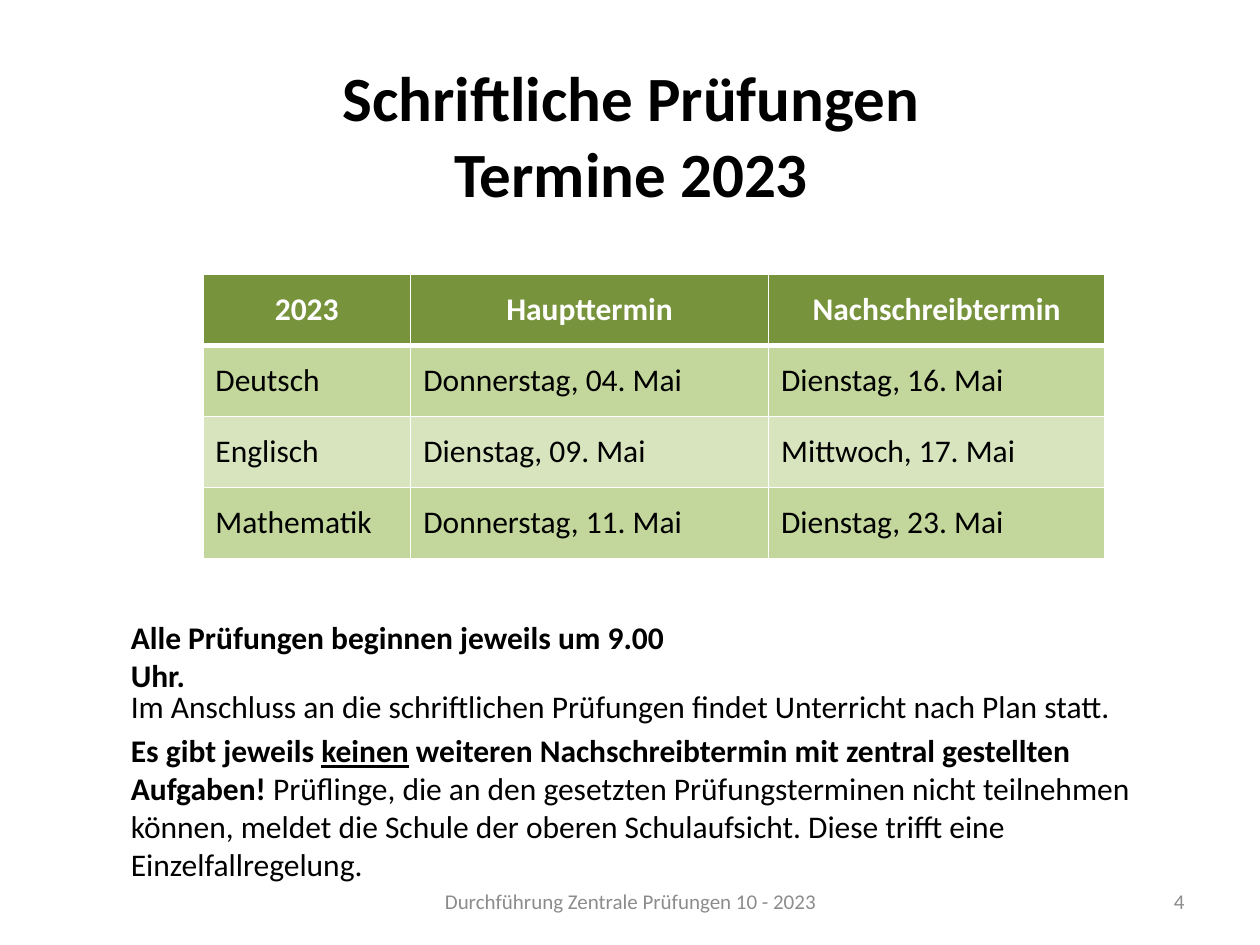
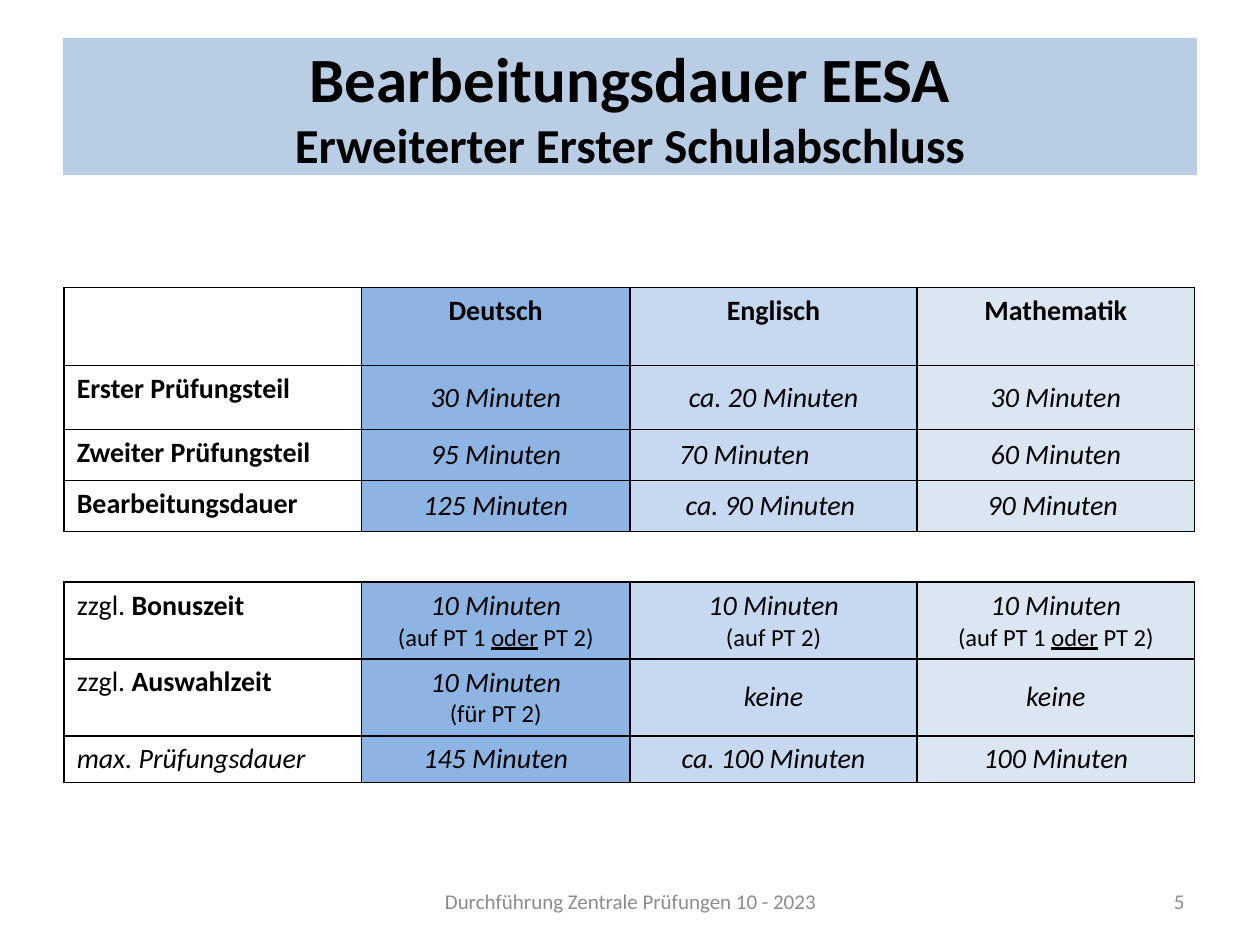
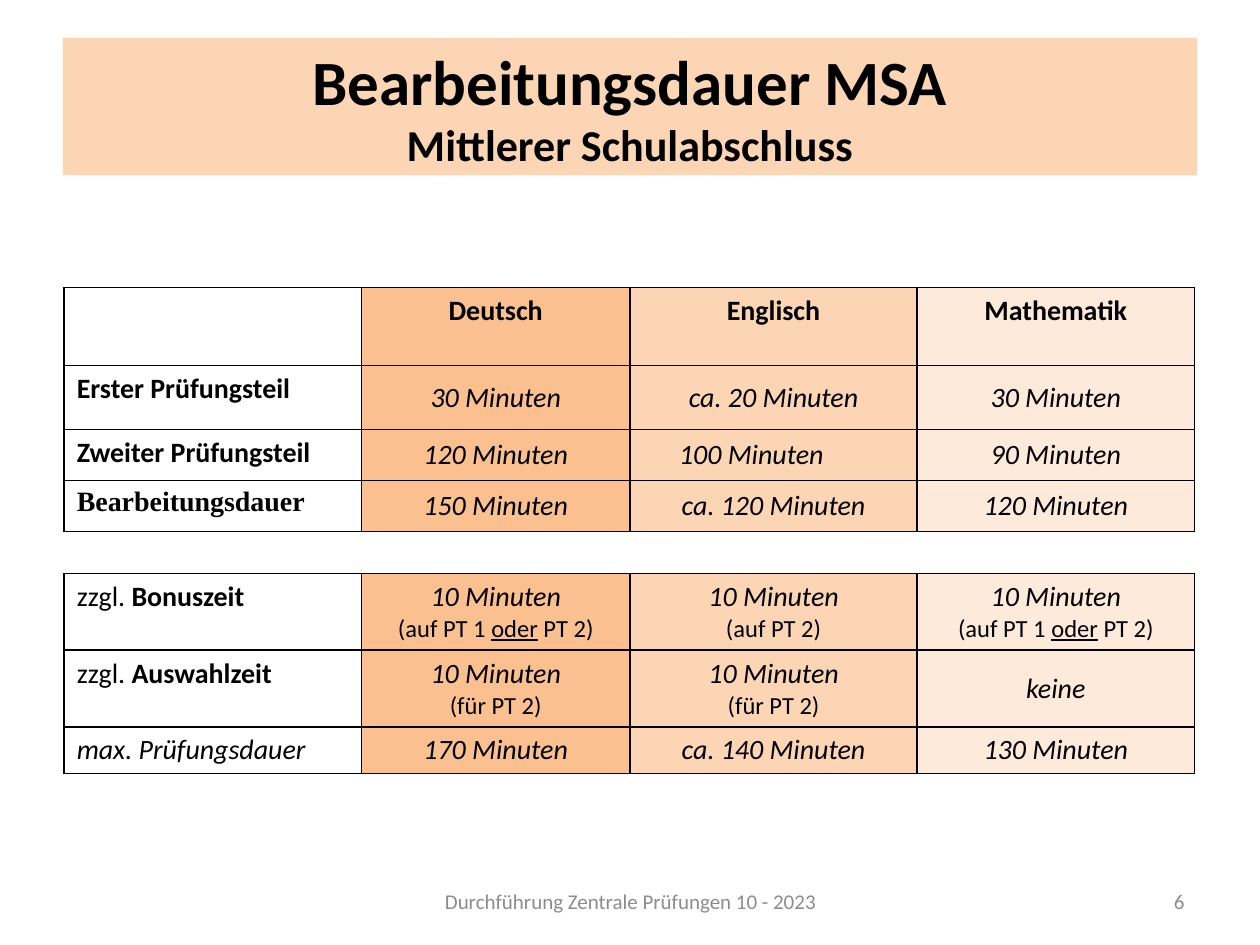
from lxml.etree import SubElement
from pptx import Presentation
from pptx.dml.color import RGBColor
from pptx.enum.shapes import MSO_SHAPE
from pptx.enum.text import MSO_ANCHOR, PP_ALIGN
from pptx.oxml.ns import qn
from pptx.util import Inches, Pt

COLS, ROWS = 100, 75
FONT, BLACK, WHITE, GRAY = "Calibri", "000000", "FFFFFF", "8C8C8C"
LEFT, CENTER, RIGHT = PP_ALIGN.LEFT, PP_ALIGN.CENTER, PP_ALIGN.RIGHT
TOP, MIDDLE = MSO_ANCHOR.TOP, MSO_ANCHOR.MIDDLE
FOOTER = "Durchführung Zentrale Prüfungen 10 - 2023"
TITLE_BAND = (5, 3, 90, 10.9)
SUBJECTS = ["Deutsch", "Englisch", "Mathematik"]
DURATION_COLS = [23.6, 21.3, 22.8, 22]
PART_ROWS, EXTRA_ROWS = [6.2, 5.1, 4.05, 4.05], [6.1, 6.1, 3.7]
EITHER_PART = "10 Minuten\n(auf PT 1 _oder_ PT 2)"
CHOICE_TIME = "10 Minuten\n(für PT 2)"
BONUS_TIMES = [EITHER_PART, "10 Minuten\n(auf PT 2)", EITHER_PART]


def color(value):
    """Turn a hex string into a colour."""
    return RGBColor.from_string(value)


def grid(*units):
    """Turn grid units into lengths."""
    return [Inches(10 / COLS * unit) for unit in units]


def add_runs(p, text, hue=BLACK, **fmt):
    """Add runs to a paragraph; *bold* and _underlined_ parts are marked."""
    for i, part in enumerate(text.split("*")):
        for j, piece in enumerate(part.split("_")):
            if not piece:
                continue
            r = p.add_run()
            r.text = piece
            values = {"name": FONT, "size": Pt(18), **fmt}
            if i % 2:
                values["bold"] = True
            if j % 2:
                values["underline"] = True
            for key, value in values.items():
                setattr(r.font, key, value)
            r.font.color.rgb = color(hue)


def add_text(slide, box, text, align=LEFT, anchor=TOP, gap=0, **fmt):
    """Add a wrapping text box with one paragraph per line."""
    tf = slide.shapes.add_textbox(*grid(*box)).text_frame
    tf.word_wrap, tf.vertical_anchor = True, anchor
    for i, line in enumerate(text.split("\n")):
        p = tf.add_paragraph() if i else tf.paragraphs[0]
        p.alignment, p.space_after = align, Pt(gap)
        add_runs(p, line, **fmt)


def add_title(slide, box, lines, sizes, fill=None):
    """Add a two-line bold title, on a colour band if a fill is given."""
    sp = slide.shapes.add_shape(MSO_SHAPE.RECTANGLE, *grid(*box))
    sp.shadow.inherit = False
    sp.line.fill.background()
    if fill:
        sp.fill.solid()
        sp.fill.fore_color.rgb = color(fill)
    else:
        sp.fill.background()
    tf = sp.text_frame
    tf.word_wrap, tf.vertical_anchor = True, MIDDLE
    p = tf.paragraphs[0]
    p.alignment = CENTER
    for i, (line, size) in enumerate(zip(lines, sizes)):
        if i:
            p.add_line_break()
        add_runs(p, line, size=Pt(size), bold=True)


def add_footer(slide, number):
    """Add the footer line and the page number."""
    style = {"anchor": MIDDLE, "size": Pt(12), "hue": GRAY}
    add_text(slide, (34.2, 69.5, 31.7, 4), FOOTER, CENTER, **style)
    add_text(slide, (71.7, 69.5, 23.3, 4), str(number), RIGHT, **style)


def style_cell(cell, fill, line, widths):
    """Set the borders (left, right, top, bottom) and fill of a cell."""
    tc_pr = cell._tc.get_or_add_tcPr()
    for side, width in zip("LRTB", widths):
        ln = SubElement(tc_pr, qn(f"a:ln{side}"), w=str(Pt(width)))
        SubElement(SubElement(ln, qn("a:solidFill")), qn("a:srgbClr"), val=line)
    if fill:
        cell.fill.solid()
        cell.fill.fore_color.rgb = color(fill)
    else:
        cell.fill.background()


def add_grid_table(slide, left, top, widths, heights):
    """Add an unbanded table with the given column widths and row heights."""
    box = grid(left, top, sum(widths), sum(heights))
    table = slide.shapes.add_table(len(heights), len(widths), *box).table
    table.first_row = table.horz_banding = False
    for column, width in zip(table.columns, grid(*widths)):
        column.width = width
    for row, height in zip(table.rows, grid(*heights)):
        row.height = height
    return table


def fill_cell(cell, text, align, anchor, **fmt):
    """Write a cell; its second line is small and upright."""
    cell.vertical_anchor = anchor
    for i, line in enumerate(text.split("\n")):
        p = cell.text_frame.add_paragraph() if i else cell.text_frame.paragraphs[0]
        p.alignment = align
        add_runs(p, line, **({"size": Pt(14)} if i else fmt))


def add_dates_table(slide, left, top):
    """Add the green table of exam dates."""
    rows = [
        ["2023", "Haupttermin", "Nachschreibtermin"],
        ["Deutsch", "Donnerstag, 04. Mai", "Dienstag, 16. Mai"],
        ["Englisch", "Dienstag, 09. Mai", "Mittwoch, 17. Mai"],
        ["Mathematik", "Donnerstag, 11. Mai", "Dienstag, 23. Mai"],
    ]
    fills = ["77933C", "C3D69B", "D7E4BD", "C3D69B"]
    edges = [1, 3, 1, 1, 1]
    table = add_grid_table(slide, left, top, [16.5, 28.4, 26.7], [5.63] * len(rows))
    for y, row in enumerate(rows):
        head = y == 0
        for x, text in enumerate(row):
            cell = table.cell(y, x)
            style_cell(cell, fills[y], WHITE, (1, 1, edges[y], edges[y + 1]))
            fill_cell(cell, text, CENTER if head else LEFT, MIDDLE,
                      hue=WHITE if head else BLACK, bold=head)


def add_duration_table(slide, left, top, heights, rows, tints, fonts=None):
    """Add a table with a label column and one tinted column per subject."""
    table = add_grid_table(slide, left, top, DURATION_COLS, heights)
    for y, row in enumerate(rows):
        for x, text in enumerate(row):
            cell = table.cell(y, x)
            style_cell(cell, tints[x - 1] if x else None, BLACK, [1] * 4)
            head = text in SUBJECTS
            italic = text.startswith("max.") or x > 0 and not head
            name = (fonts or {}).get(text, FONT)
            fill_cell(cell, text, CENTER if x else LEFT,
                      MIDDLE if x and not head else TOP,
                      size=Pt(16), name=name, bold=head, italic=italic)
    return table


def dates_slide(slide):
    """Build the slide with the exam dates."""
    add_title(slide, (5.1, 4.4, 90, 12.5),
              ["Schriftliche Prüfungen", "Termine 2023"], [36, 36])
    add_dates_table(slide, 16.1, 21.8)
    add_text(slide, (9.4, 48.6, 49, 4),
             "Alle Prüfungen beginnen jeweils um 9.00 Uhr.", bold=True)
    add_text(slide, (9.4, 54, 83.1, 16.7),
             "Im Anschluss an die schriftlichen Prüfungen findet Unterricht nach "
             "Plan statt.\n*Es gibt jeweils _keinen_ weiteren Nachschreibtermin mit "
             "zentral gestellten Aufgaben! *Prüflinge, die an den gesetzten "
             "Prüfungsterminen nicht teilnehmen können, meldet die Schule der "
             "oberen Schulaufsicht. Diese trifft eine Einzelfallregelung.", gap=4)


def duration_slide(slide, title, subtitle, size, band, tints, second, total,
                   choice, maximum, extra_top, fonts=None):
    """Build a slide with the exam durations for one school certificate."""
    add_title(slide, TITLE_BAND, [title, subtitle], [36, size], band)
    parts = [
        ["", *SUBJECTS],
        ["*Erster Prüfungsteil*", "30 Minuten", "ca. 20 Minuten", "30 Minuten"],
        ["*Zweiter Prüfungsteil*", *second],
        ["*Bearbeitungsdauer*", *total],
    ]
    extras = [
        ["zzgl. *Bonuszeit*", *BONUS_TIMES],
        ["zzgl.* Auswahlzeit*", *choice],
        ["max. Prüfungsdauer", *maximum],
    ]
    table = add_duration_table(slide, 5.1, 22.8, PART_ROWS, parts, tints, fonts)
    p = table.cell(2, 2).text_frame.paragraphs[0]
    p.alignment = LEFT
    p._p.get_or_add_pPr().set("marL", str(Inches(0.29)))
    add_duration_table(slide, 5.1, extra_top, EXTRA_ROWS, extras, tints)


def eesa_slide(slide):
    """Build the blue slide for the extended first certificate."""
    duration_slide(
        slide, "Bearbeitungsdauer EESA", "Erweiterter Erster Schulabschluss", 27.9,
        "B9CDE5", ["8EB4E3", "C6D9F1", "DCE6F2"],
        second=["95 Minuten", "70 Minuten", "60 Minuten"],
        total=["125 Minuten", "ca. 90 Minuten ", "90 Minuten "],
        choice=[CHOICE_TIME, "keine", "keine"],
        maximum=["145 Minuten", "ca. 100 Minuten", "100 Minuten"],
        extra_top=46.2)


def msa_slide(slide):
    """Build the orange slide for the intermediate certificate."""
    duration_slide(
        slide, "Bearbeitungsdauer MSA", "Mittlerer Schulabschluss", 25.2,
        "FCD5B5", ["FAC090", "FCD5B5", "FDEADA"],
        second=["120 Minuten", "100 Minuten", "90 Minuten"],
        total=["150 Minuten", "ca. 120 Minuten", "120 Minuten"],
        choice=[CHOICE_TIME, CHOICE_TIME, "keine"],
        maximum=["170 Minuten", "ca. 140 Minuten", "130 Minuten"],
        extra_top=45.5, fonts={"*Bearbeitungsdauer*": "Times New Roman"})


def main():
    """Build and save the presentation."""
    prs = Presentation()
    prs.slide_width, prs.slide_height = grid(COLS, ROWS)
    for number, build in enumerate([dates_slide, eesa_slide, msa_slide], 4):
        slide = prs.slides.add_slide(prs.slide_layouts[6])
        build(slide)
        add_footer(slide, number)
    prs.save("out.pptx")


if __name__ == "__main__":
    main()
